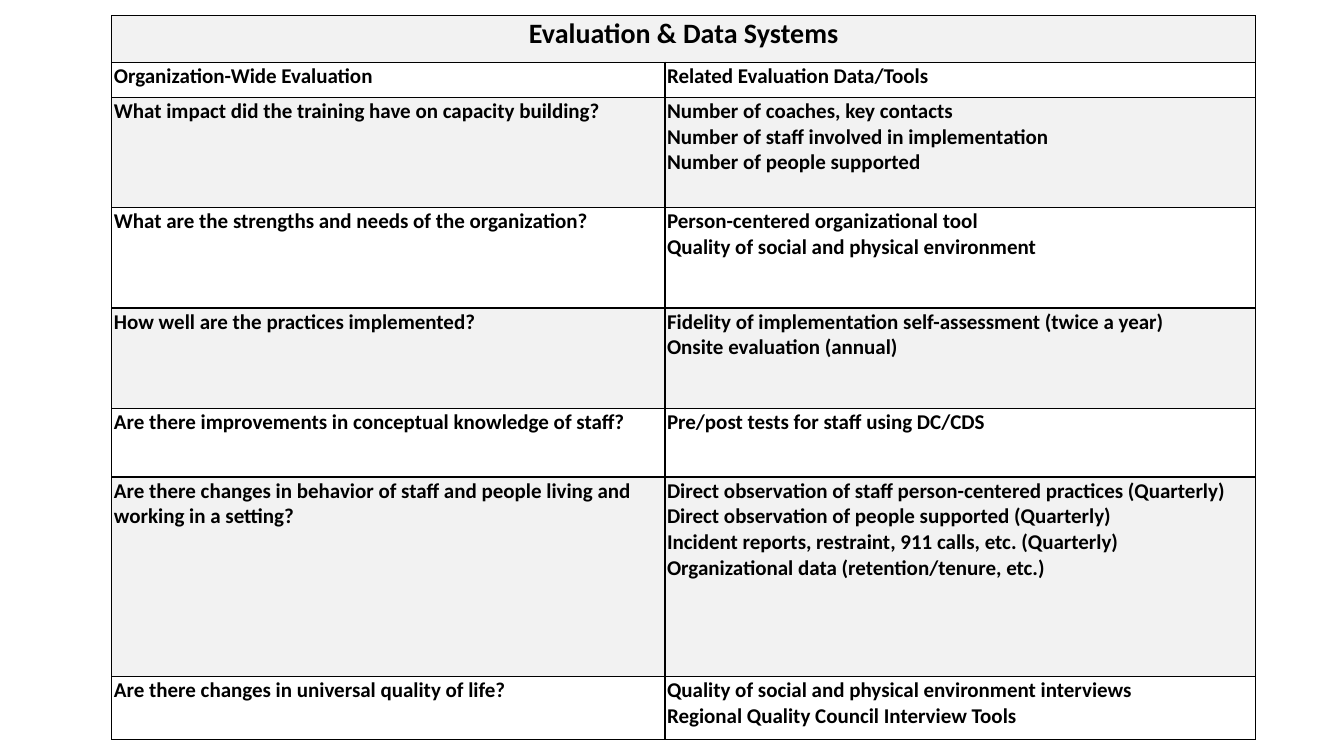
"""Build the Evaluation & Data Systems slide as one bordered table."""
from dataclasses import dataclass

from lxml.etree import SubElement
from pptx import Presentation
from pptx.dml.color import RGBColor
from pptx.enum.text import MSO_ANCHOR, PP_ALIGN
from pptx.oxml.ns import qn
from pptx.table import _Cell as Cell
from pptx.util import Cm, Pt

BLACK = "000000"
SHADE = "F2F2F2"
COLUMN_WIDTHS = (13.94, 14.88)


@dataclass(frozen=True)
class EvaluationRow:
    height: float
    question: str
    tools: tuple[str, ...] = ()
    size: int = 15


ROWS = (
    EvaluationRow(1.17, "Evaluation & Data Systems", size=20),
    EvaluationRow(0.88, "Organization-Wide Evaluation", ("Related Evaluation Data/Tools",)),
    EvaluationRow(
        2.77,
        "What impact did the training have on capacity building?",
        (
            "Number of coaches, key contacts",
            "Number of staff involved in implementation",
            "Number of people supported",
        ),
    ),
    EvaluationRow(
        2.54,
        "What are the strengths and needs of the organization?",
        ("Person-centered organizational tool", "Quality of social and physical environment"),
    ),
    EvaluationRow(
        2.54,
        "How well are the practices implemented?",
        (
            "Fidelity of implementation self-assessment (twice a year)",
            "Onsite evaluation (annual)",
        ),
    ),
    EvaluationRow(
        1.72,
        "Are there improvements in conceptual knowledge of staff?",
        ("Pre/post tests for staff using DC/CDS",),
    ),
    EvaluationRow(
        5.02,
        "Are there changes in behavior of staff and people living and working in a setting?",
        (
            "Direct observation of staff person-centered practices (Quarterly)",
            "Direct observation of people supported (Quarterly)",
            "Incident reports, restraint, 911 calls, etc. (Quarterly)",
            "Organizational data (retention/tenure, etc.)",
        ),
    ),
    EvaluationRow(
        1.6,
        "Are there changes in universal quality of life?",
        (
            "Quality of social and physical environment interviews",
            "Regional Quality Council Interview Tools",
        ),
    ),
)


def color(value: str) -> RGBColor:
    return RGBColor.from_string(value)


def add_borders(cell: Cell) -> None:
    properties = cell._tc.get_or_add_tcPr()
    for side in ("a:lnL", "a:lnR", "a:lnT", "a:lnB"):
        line = SubElement(properties, qn(side), w=str(Pt(1)))
        fill = SubElement(line, qn("a:solidFill"))
        SubElement(fill, qn("a:srgbClr"), val=BLACK)


def format_cell(cell: Cell, shaded: bool) -> None:
    add_borders(cell)
    cell.margin_left = cell.margin_right = Cm(0.05)
    cell.margin_top = cell.margin_bottom = Cm(0.03)
    cell.vertical_anchor = MSO_ANCHOR.TOP
    if shaded:
        cell.fill.solid()
        cell.fill.fore_color.rgb = color(SHADE)
    else:
        cell.fill.background()


def write_lines(cell: Cell, lines: tuple[str, ...], size: int, alignment: PP_ALIGN) -> None:
    cell.text = "\n".join(lines)
    for paragraph in cell.text_frame.paragraphs:
        paragraph.alignment = alignment
        paragraph.font.name = "Calibri"
        paragraph.font.size = Pt(size)
        paragraph.font.bold = True
        paragraph.font.color.rgb = color(BLACK)


def main() -> None:
    presentation = Presentation()
    presentation.slide_width = Cm(33.87)
    presentation.slide_height = Cm(19.05)
    slide = presentation.slides.add_slide(presentation.slide_layouts[6])
    table = slide.shapes.add_table(
        len(ROWS),
        len(COLUMN_WIDTHS),
        Cm(2.82),
        Cm(0.4),
        Cm(sum(COLUMN_WIDTHS)),
        Cm(sum(row.height for row in ROWS)),
    ).table
    for column, width in zip(table.columns, COLUMN_WIDTHS):
        column.width = Cm(width)
    for index, row in enumerate(ROWS):
        table.rows[index].height = Cm(row.height)
        question_cell, tools_cell = table.rows[index].cells
        for cell in (question_cell, tools_cell):
            format_cell(cell, shaded=index % 2 == 0)
        alignment = PP_ALIGN.LEFT if row.tools else PP_ALIGN.CENTER
        write_lines(question_cell, (row.question,), row.size, alignment)
        if row.tools:
            write_lines(tools_cell, row.tools, row.size, alignment)
        else:
            question_cell.merge(tools_cell)
    presentation.save("out.pptx")


if __name__ == "__main__":
    main()
